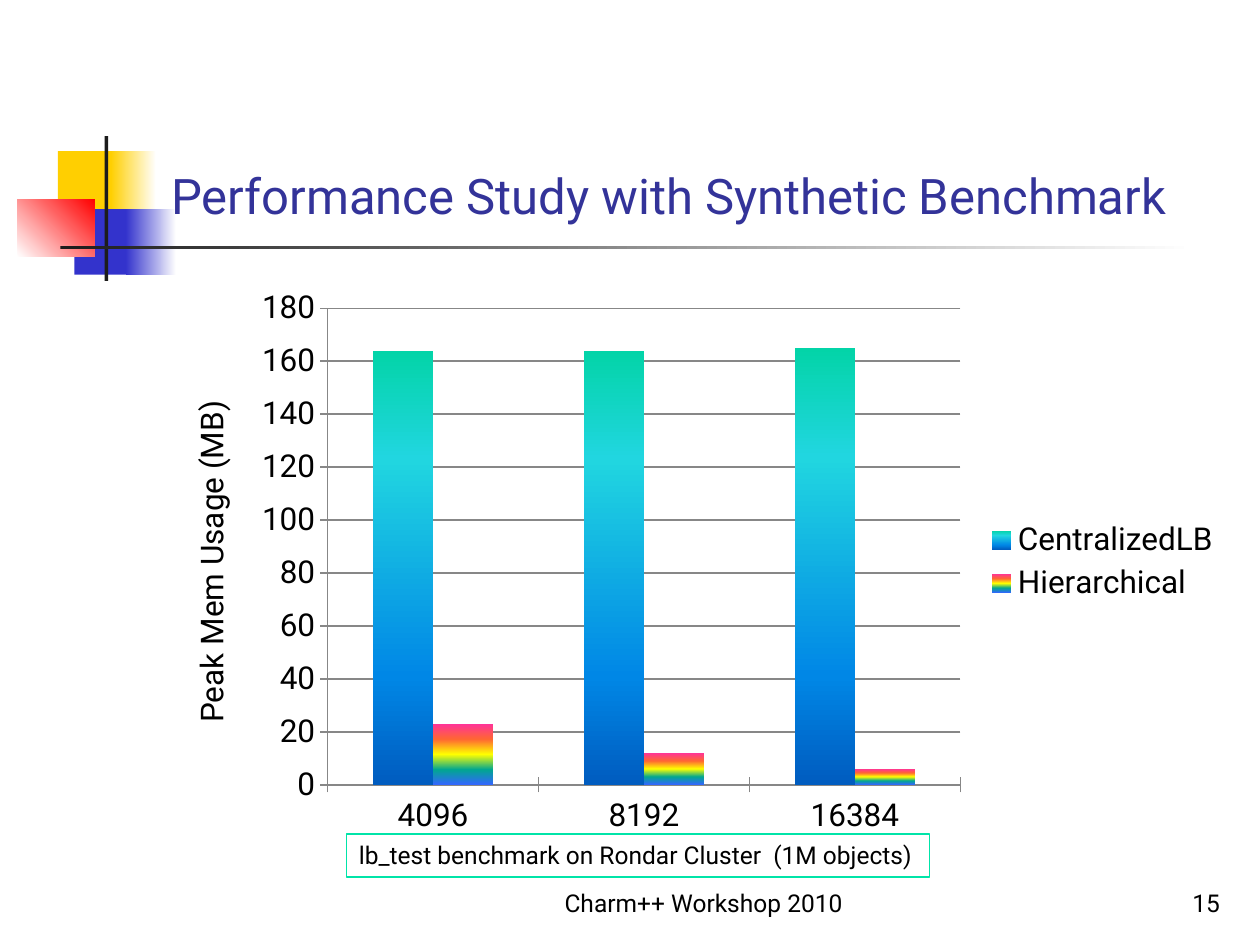
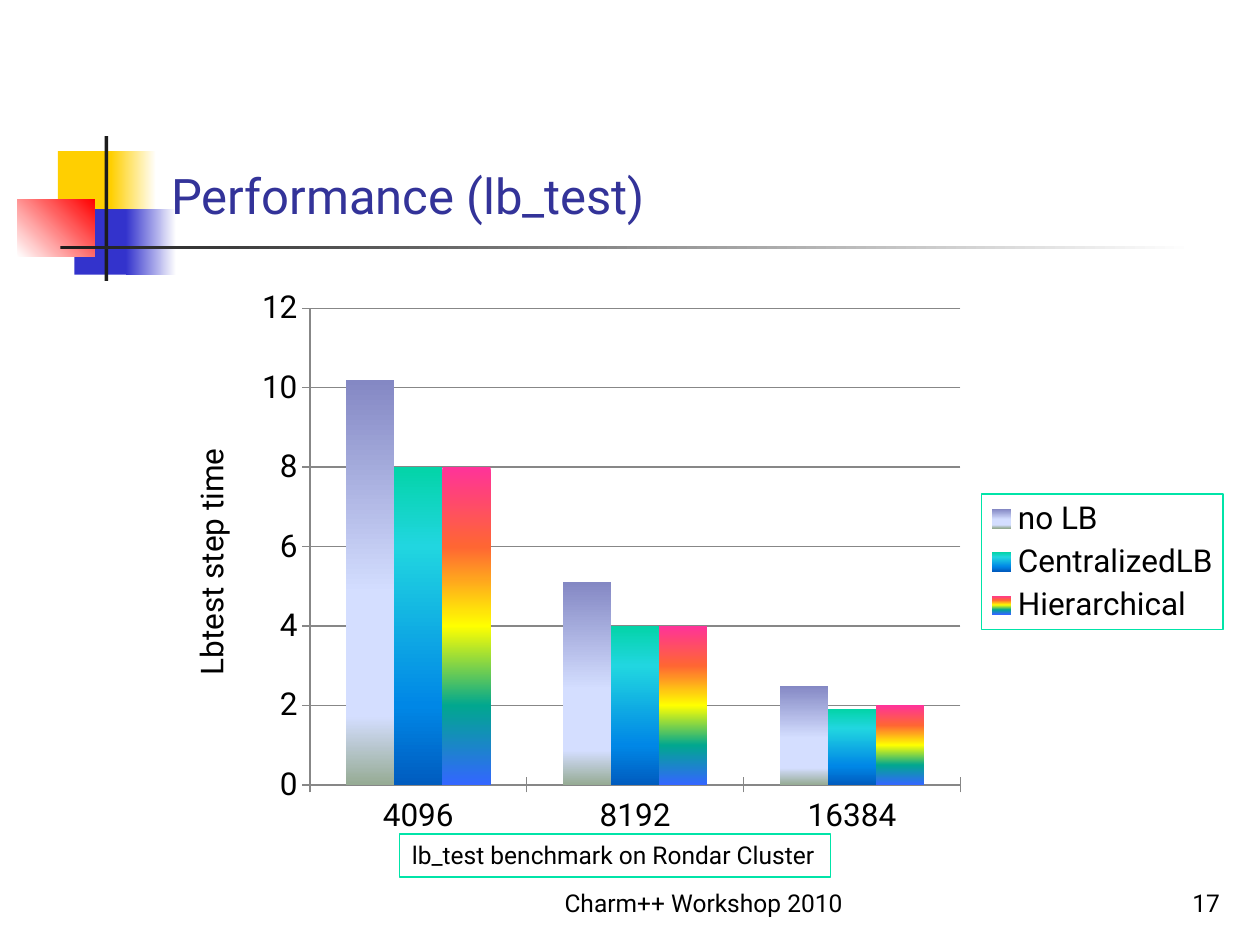
from lxml import etree
from pptx import Presentation
from pptx.chart.data import CategoryChartData
from pptx.dml.color import RGBColor
from pptx.enum.chart import XL_CHART_TYPE, XL_LEGEND_POSITION, XL_TICK_MARK
from pptx.enum.shapes import MSO_SHAPE
from pptx.enum.text import MSO_ANCHOR, MSO_AUTO_SIZE, PP_ALIGN
from pptx.oxml import parse_xml
from pptx.oxml.ns import nsdecls, qn
from pptx.util import Inches, Pt

COLUMNS = XL_CHART_TYPE.COLUMN_CLUSTERED
LEGEND_RIGHT = XL_LEGEND_POSITION.RIGHT
CROSS, NO_TICK = XL_TICK_MARK.CROSS, XL_TICK_MARK.NONE
RECTANGLE = MSO_SHAPE.RECTANGLE
BOTTOM, TOP = MSO_ANCHOR.BOTTOM, MSO_ANCHOR.TOP
LEFT, CENTER, RIGHT = PP_ALIGN.LEFT, PP_ALIGN.CENTER, PP_ALIGN.RIGHT

FONT = "Roboto"
COLORS = {
    "title": "333399",
    "text": "000000",
    "border": "00E4A8",
    "axis": "878787",
    "yellow": "FFCF01",
    "blue": "3333CC",
    "red": "FF0000",
    "dark": "1C1C1C",
    "white": "FFFFFF",
}
DECORATION = [
    ((0.46, 1.2, 0.48, 0.52), ["yellow"], 0),
    ((0.88, 1.2, 0.36, 0.52), ["yellow", "white"], 0),
    ((0.59, 1.66, 0.46, 0.52), ["blue"], 0),
    ((1, 1.66, 0.4, 0.52), ["blue", "white"], 0),
    ((0.14, 1.58, 0.61, 0.46), ["white", "red"], 315),
    ((0.83, 1.08, 0.03, 1.15), ["dark"], 0),
    ((0.48, 1.95, 9, 0.03), ["dark", "white"], 0),
]
SERIES_STOPS = {
    "no LB": [(0, "8488C4"), (53, "D4DEFF"), (83, "D4DEFF"), (100, "96AB94")],
    "CentralizedLB": [(0, "03D4A8"), (25, "21D6E0"), (75, "0087E6"), (100, "005CBF")],
    "Hierarchical": [(0, "FF3399"), (25, "FF6633"), (50, "FFFF00"),
                     (75, "01A78F"), (100, "3366FF")],
}
CORES = ["4096", "8192", "16384"]
FOOTER = "Charm++ Workshop 2010"
TITLE_BOX = (1.26, 0.23, 8.52, 1.6)
CHART_BOX = (1.29, 2.21, 8.5, 4.5)
FOOTER_BOX = (4, 6.83, 3.17, 0.5)
NUMBER_BOX = (7.7, 6.83, 2.08, 0.5)
SLIDES = [
    {
        "title": "Performance Study with Synthetic Benchmark",
        "caption": "lb_test benchmark on Rondar Cluster  (1M objects)",
        "caption_box": (2.75, 6.62, 4.63, 0.34),
        "number": "15",
        "axis_title": "Peak Mem Usage (MB)",
        "maximum": 180,
        "step": 20,
        "legend_border": False,
        "series": {"CentralizedLB": [164, 164, 165], "Hierarchical": [23, 12, 6]},
    },
    {
        "title": "Performance (lb_test)",
        "caption": "lb_test benchmark on Rondar Cluster",
        "caption_box": (3.17, 6.62, 3.42, 0.34),
        "number": "17",
        "axis_title": "Lbtest step time",
        "maximum": 12,
        "step": 2,
        "legend_border": True,
        "series": {
            "no LB": [10.2, 5.1, 2.5],
            "CentralizedLB": [8, 4, 1.9],
            "Hierarchical": [8, 4, 2],
        },
    },
]


def rgb(name):
    return RGBColor.from_string(COLORS[name])


def inches(box):
    return [Inches(length) for length in box]


def style_font(font, size, color="text"):
    font.name = FONT
    font.size = Pt(size)
    font.bold = False
    font.color.rgb = rgb(color)


def write_text(frame, text, size, color="text", align=LEFT, anchor=TOP):
    frame.vertical_anchor = anchor
    paragraph = frame.paragraphs[0]
    paragraph.alignment = align
    run = paragraph.add_run()
    run.text = text
    style_font(run.font, size, color)


def apply_gradient(fill, element, stops, angle):
    fill.gradient()
    gradient = next(element.iter(qn("a:gradFill")))
    for child in list(gradient):
        gradient.remove(child)
    stop_list = etree.SubElement(gradient, qn("a:gsLst"))
    for position, color in stops:
        stop = etree.SubElement(stop_list, qn("a:gs"), pos=str(position * 1000))
        etree.SubElement(stop, qn("a:srgbClr"), val=color)
    etree.SubElement(gradient, qn("a:lin"), ang=str(angle * 60000), scaled="0")


def decorate_layout(layout, slide):
    for index, (box, colors, angle) in enumerate(DECORATION):
        shape = slide.shapes.add_shape(RECTANGLE, *inches(box))
        shape.shadow.inherit = False
        shape.line.fill.background()
        if len(colors) == 1:
            shape.fill.solid()
            shape.fill.fore_color.rgb = rgb(colors[0])
        else:
            stops = [(place, COLORS[color]) for place, color in zip((0, 100), colors)]
            apply_gradient(shape.fill, shape.element, stops, angle)
        shape.element.nvSpPr.cNvPr.set("id", str(20 + index))
        layout.shapes.element.append(shape.element)


def add_title(slide, text):
    title = slide.shapes.title
    title.left, title.top, title.width, title.height = inches(TITLE_BOX)
    title.text_frame.auto_size = MSO_AUTO_SIZE.NONE
    write_text(title.text_frame, text, 28, "title", LEFT, BOTTOM)


def add_caption(slide, text, box):
    caption = slide.shapes.add_textbox(*inches(box))
    caption.line.color.rgb = rgb("border")
    caption.line.width = Pt(0.75)
    caption.text_frame.word_wrap = False
    caption.text_frame.auto_size = MSO_AUTO_SIZE.SHAPE_TO_FIT_TEXT
    write_text(caption.text_frame, text, 14)


def add_footer(slide, text, box, align):
    footer = slide.shapes.add_textbox(*inches(box))
    footer.text_frame.word_wrap = True
    write_text(footer.text_frame, text, 14, "text", align, BOTTOM)


def add_legend_border(chart):
    legend = next(chart.element.iter(qn("c:legend")))
    legend.find(qn("c:overlay")).addnext(parse_xml(
        f'<c:spPr {nsdecls("c", "a")}><a:ln w="9525"><a:solidFill>'
        f'<a:srgbClr val="{COLORS["border"]}"/></a:solidFill></a:ln></c:spPr>'))


def add_column_chart(slide, content):
    data = CategoryChartData()
    data.categories = CORES
    for name, values in content["series"].items():
        data.add_series(name, values)
    chart = slide.shapes.add_chart(COLUMNS, *inches(CHART_BOX), data).chart
    style_font(chart.font, 18)
    chart.has_title = False
    chart.has_legend = True
    chart.legend.position = LEGEND_RIGHT
    chart.legend.include_in_layout = False
    if content["legend_border"]:
        add_legend_border(chart)

    plot = chart.plots[0]
    plot.gap_width = 150
    plot.overlap = 0
    plot.vary_by_categories = False
    for series, element in zip(plot.series, chart.element.iter(qn("c:ser"))):
        apply_gradient(series.format.fill, element, SERIES_STOPS[series.name], 90)

    value_axis = chart.value_axis
    value_axis.minimum_scale = 0
    value_axis.maximum_scale = content["maximum"]
    value_axis.major_unit = content["step"]
    value_axis.has_major_gridlines = True
    write_text(value_axis.axis_title.text_frame, content["axis_title"], 18, align=CENTER)
    for axis in (chart.category_axis, value_axis):
        axis.major_tick_mark = CROSS
        axis.minor_tick_mark = NO_TICK
    for line in (chart.category_axis.format.line, value_axis.format.line,
                 value_axis.major_gridlines.format.line):
        line.color.rgb = rgb("axis")
        line.width = Pt(0.75)


def main():
    presentation = Presentation()
    presentation.slide_width, presentation.slide_height = Inches(10), Inches(7.5)
    layout = presentation.slide_layouts[5]
    for index, content in enumerate(SLIDES):
        slide = presentation.slides.add_slide(layout)
        if index == 0:
            decorate_layout(layout, slide)
        add_title(slide, content["title"])
        add_caption(slide, content["caption"], content["caption_box"])
        add_footer(slide, content["number"], NUMBER_BOX, RIGHT)
        add_footer(slide, FOOTER, FOOTER_BOX, CENTER)
        add_column_chart(slide, content)
    presentation.save("out.pptx")


if __name__ == "__main__":
    main()
